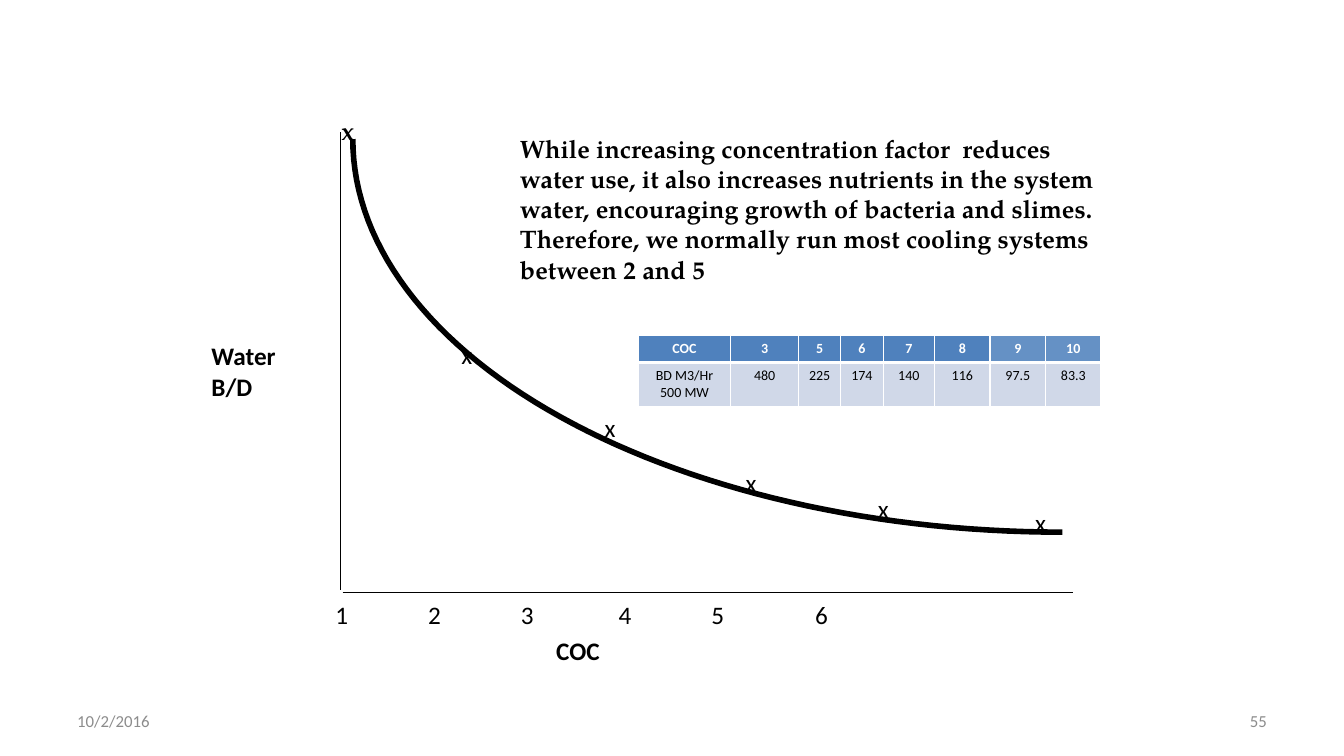
import math

import pptx
import pptx.chart.data
import pptx.dml.color
import pptx.enum.shapes
import pptx.enum.text
import pptx.oxml
import pptx.oxml.ns
import pptx.util
from lxml import etree

COLORS = {"ink": "000000", "white": "FFFFFF", "header": "4F81BD",
          "body": "D0D8E8", "footer": "8C8C8C"}
SANS, SERIF = "Calibri", "TeX Gyre Pagella"
ALIGN = pptx.enum.text.PP_ALIGN
ANCHOR = pptx.enum.text.MSO_ANCHOR

prs = pptx.Presentation()
prs.slide_width = pptx.util.Inches(13.33)
prs.slide_height = pptx.util.Inches(7.5)


# The slide is a grid of 100 columns by 100 rows
def col(n):
    return round(prs.slide_width * n / 100)


def row(n):
    return round(prs.slide_height * n / 100)


def grid(x, y, w, h):
    return col(x), row(y), col(w), row(h)


def rgb(name):
    return pptx.dml.color.RGBColor.from_string(COLORS[name])


def add_xml(parent, tag, **attrs):
    return etree.SubElement(parent, pptx.oxml.ns.qn(tag), attrs)


def style(p, size, color, bold=False, font=SANS, align=ALIGN.LEFT):
    p.alignment = align
    for r in p.runs:
        r.font.size = pptx.util.Pt(size)
        r.font.name = font
        r.font.bold = bold
        r.font.color.rgb = rgb(color)


def add_text(s, box, text, size=18, color="ink", anchor=ANCHOR.TOP, **look):
    tf = s.shapes.add_textbox(*grid(*box)).text_frame
    tf.word_wrap = True
    tf.vertical_anchor = anchor
    tf.text = text
    for p in tf.paragraphs:
        style(p, size, color, **look)
    return tf


def add_axis(s, x1, y1, x2, y2):
    line = s.shapes.add_connector(pptx.enum.shapes.MSO_CONNECTOR.STRAIGHT,
                                  col(x1), row(y1), col(x2), row(y2))
    line.line.color.rgb = rgb("ink")
    line.line.width = pptx.util.Pt(1)
    add_xml(line._element.spPr, "a:effectLst")


def add_curve(s, x, y, w, h, steps=60):
    """Quarter ellipse falling from the top left to the bottom right."""
    angles = [math.pi / 2 * i / steps for i in range(steps + 1)]
    points = [(col(x + w * (1 - math.cos(a))), row(y + h * math.sin(a)))
              for a in angles]
    builder = s.shapes.build_freeform(*points[0])
    builder.add_line_segments(points[1:], close=False)
    curve = builder.convert_to_shape()
    curve.shadow.inherit = False
    curve.fill.background()
    curve.line.color.rgb = rgb("ink")
    curve.line.width = pptx.util.Pt(4)


def add_plot(s, x, y, w, h):
    # Axes and curve
    add_axis(s, x, y, x, y + h - 0.4)
    add_axis(s, x + 0.15, y + h, x + w, y + h)
    add_curve(s, x + 0.9, y + 0.93, 52.8, 52)

    # Axis numbers on tab stops
    tf = add_text(s, (x - 1.13, y + h + 0.27, 39.8, 5.33),
                  "\t".join("123456"))
    tabs = add_xml(tf.paragraphs[0]._p.get_or_add_pPr(), "a:tabLst")
    for stop in (6.9, 13.8, 21.08, 27.98, 35.7):
        add_xml(tabs, "a:tab", pos=str(col(stop)), algn="l")

    # Point markers
    for dx, dy in ((50.93, 48.93), (39.23, 47.07), (29.4, 43.73),
                   (18.9, 36.4), (8.25, 26.8)):
        add_text(s, (x + dx, y + dy, 2.7, 5.33), "x")
    add_text(s, (x - 0.68, y - 2.93, 3.08, 5.33), "x", bold=True, font=SERIF)

    # Axis titles
    add_text(s, (x + 15.3, y + h + 4.93, 6.9, 5.33), "COC", bold=True)
    add_text(s, (x - 10.35, y + 26.93, 10.13, 9.33), "Water\nB/D", bold=True)


def set_borders(cell, bottom):
    tc_pr = cell._tc.get_or_add_tcPr()
    widths = {"a:lnL": 1, "a:lnR": 1, "a:lnT": 1, "a:lnB": bottom}
    for i, (tag, width) in enumerate(widths.items()):
        ln = pptx.oxml.parse_xml(
            f'<{tag} {pptx.oxml.ns.nsdecls("a")} w="{pptx.util.Pt(width)}">'
            f'<a:solidFill><a:srgbClr val="{COLORS["white"]}"/></a:solidFill>'
            f'</{tag}>')
        tc_pr.insert(i, ln)


def add_blowdown_table(s, x, y, w, h):
    rows = (("COC", "3", "5", "6", "7", "8", "9", "10"),
            ("BD M3/Hr\n500 MW", "480", "225", "174", "140", "116",
             "97.5", "83.3"))
    widths = (6.9, 5.03, 3.15, 3.15, 3.83, 4.13, 4.13, 4.13)
    table = s.shapes.add_table(2, len(widths), *grid(x, y, w, h)).table
    for column, width in zip(table.columns, widths):
        column.width = col(width)
    for table_row, share in zip(table.rows, (0.38, 0.62)):
        table_row.height = row(h * share)

    for i, values in enumerate(rows):
        header = i == 0
        for j, value in enumerate(values):
            cell = table.cell(i, j)
            cell.text = value
            for p in cell.text_frame.paragraphs:
                style(p, 10, "white" if header else "ink", bold=header,
                      align=ALIGN.CENTER)
            cell.fill.solid()
            cell.fill.fore_color.rgb = rgb("header" if header else "body")
            if header and j >= 6:
                color = cell._tc.tcPr.find(".//" + pptx.oxml.ns.qn("a:srgbClr"))
                add_xml(color, "a:alpha", val="87000")
            set_borders(cell, 3 if header else 1)


def add_footer(s, x, y, w, h):
    look = {"size": 12, "color": "footer", "anchor": ANCHOR.MIDDLE}
    part = 23.33
    add_text(s, (x, y, part, h), "10/2/2016", **look)
    add_text(s, (x + w - part, y, part, h), "55", align=ALIGN.RIGHT, **look)


def main():
    s = prs.slides.add_slide(prs.slide_layouts[6])
    add_plot(s, 25.35, 17.47, 54.52, 60.93)
    add_text(s, (37.95, 16.93, 45.6, 21.47),
             "While increasing concentration factor  reduces water use, it "
             "also increases nutrients in the system water, encouraging "
             "growth of bacteria and slimes. Therefore, we normally run most "
             "cooling systems between 2 and 5", bold=True, font=SERIF)
    add_footer(s, 5, 92.67, 90, 5.33)
    add_blowdown_table(s, 47.48, 44.4, 34.45, 8.4)
    prs.save("out.pptx")


if __name__ == "__main__":
    main()
